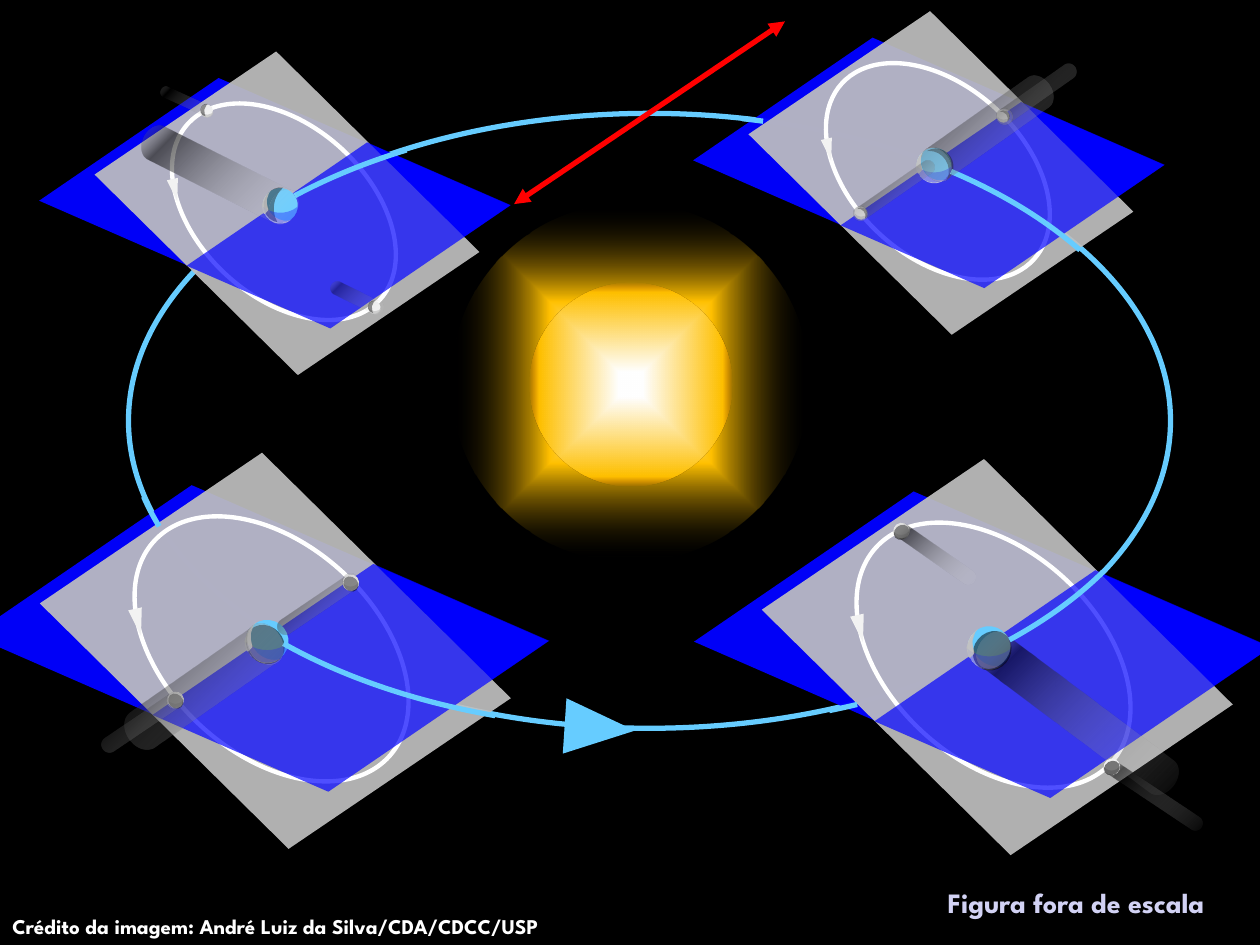
import pptx
import pptx.util
import pptx.dml.color
import pptx.enum.shapes
import pptx.enum.text
import pptx.oxml
import pptx.oxml.ns

KIND = pptx.enum.shapes.MSO_SHAPE
COLORS = {
    "space": "000000", "sky": "66CCFF", "blue": "0000FF", "sheet": "BFBFBF",
    "white": "FFFFFF", "pale": "F2F2F2", "land": "BFBFBF", "rim": "D9D9D9",
    "patch": "C0C0C0", "red": "FF0000", "lilac": "D2D2F4", "gold": "FFC000",
    "amber": "EE8800",
}
FONT = "League Spartan"
COAST = [(2.07, 0.77), (2.05, 0.8), (2.04, 0.83), (2.03, 0.86), (2.03, 0.9),
         (2.04, 0.95), (2.04, 0.97), (2.01, 1), (2, 1), (1.99, 0.97),
         (1.98, 0.92), (2, 0.86), (2.03, 0.81)]


def rgb(name):
    return pptx.dml.color.RGBColor.from_string(COLORS[name])


def add_run(p, text, size=12, color="white", bold=True):
    r = p.add_run()
    r.text = text
    r.font.name = FONT
    r.font.size = pptx.util.Pt(size)
    r.font.bold = bold
    r.font.color.rgb = rgb(color)
    return r


class Scene:
    def __init__(self, prs):
        self.unit = prs.slide_width / 10
        self.slide = prs.slides.add_slide(prs.slide_layouts[6])
        self.slide.background.fill.solid()
        self.slide.background.fill.fore_color.rgb = rgb("space")
        self.ungroup()

    def group(self):
        self.shapes = self.slide.shapes.add_group_shape().shapes

    def ungroup(self):
        self.shapes = self.slide.shapes

    def cells(self, *values):
        return [round(v * self.unit) for v in values]

    def paint(self, s, fill=None, alpha=100, line=None, width=3):
        s.shadow.inherit = False
        if fill:
            s.fill.solid()
            s.fill.fore_color.rgb = rgb(fill)
            if alpha < 100:
                clr = s.fill._xPr.find(".//" + pptx.oxml.ns.qn("a:srgbClr"))
                clr.append(pptx.oxml.parse_xml(
                    f'<a:alpha {pptx.oxml.ns.nsdecls("a")} val="{alpha * 1000}"/>'))
        else:
            s.fill.background()
        if line:
            s.line.color.rgb = rgb(line)
            s.line.width = pptx.util.Pt(width)
        else:
            s.line.fill.background()
        return s

    def shape(self, kind, box, rot=0, adj=(), **look):
        s = self.shapes.add_shape(kind, *self.cells(*box))
        s.rotation = rot
        for i, value in enumerate(adj):
            s.adjustments[i] = value
        return self.paint(s, **look)

    def glow(self, kind, box, stops, route, focus, rot=0, adj=()):
        s = self.shape(kind, box, rot, adj)
        gs = "".join(
            f'<a:gs pos="{pos * 1000}"><a:srgbClr val="{COLORS[c]}">'
            f'<a:alpha val="{alpha * 1000}"/></a:srgbClr></a:gs>'
            for pos, c, alpha in stops)
        l, t, r, b = (v * 1000 for v in focus)
        props = s._element.spPr
        old = props.find(pptx.oxml.ns.qn("a:noFill"))
        props.replace(old, pptx.oxml.parse_xml(
            f'<a:gradFill {pptx.oxml.ns.nsdecls("a")} rotWithShape="1"><a:gsLst>{gs}</a:gsLst>'
            f'<a:path path="{route}"><a:fillToRect l="{l}" t="{t}" r="{r}" b="{b}"/>'
            f'</a:path></a:gradFill>'))

    def shadow(self, box, rot, adj=0.977, dark=56):
        stops = [(0, "white", 0), (81, "space", dark), (100, "sheet", 0)]
        self.glow(KIND.CAN, box, stops, "circle", (100, 100, 0, 0), rot, [adj])

    def arc(self, x, y, start, end):
        self.shape(KIND.ARC, (x, y, 8.3, 4.92), adj=(start, end), line="sky")

    def moon(self, x, y, night, rot):
        d = 0.13 if night == "disc" else 0.1
        half = d / 2
        self.shape(KIND.OVAL, (x, y, d, d), 351.5, fill="pale")
        self.shape(KIND.MOON, (x + 0.03, y + 0.03, half, d), 270, [0.5],
                   fill="patch", alpha=72)
        if night == "disc":
            self.shape(KIND.OVAL, (x + 0.01, y + 0.01, 0.11, d), rot,
                       fill="space", alpha=51)
        else:
            dx, adj = (0.05, 0.46) if night == "right" else (0, 0.63)
            self.shape(KIND.MOON, (x + dx, y - 0.01, half, d), rot, [adj],
                       fill="space", alpha=47)

    def planet(self, x, y, scale, night_kind, night, rot, adj=(), alpha=47):
        self.group()

        def part(kind, box, *args, **look):
            left, top, w, h = (v * scale for v in box)
            self.shape(kind, (x + left, y + top, w, h), *args, **look)

        part(KIND.PARALLELOGRAM, (0, 0, 4.21, 1.79), 23.6, [0.626], fill="blue", alpha=97)
        part(KIND.PARALLELOGRAM, (0.63, -0.05, 3.19, 2.09), 44.6, [0.199],
             fill="sheet", alpha=92)
        part(KIND.OVAL, (0.93, 0.15, 2.53, 1.66), 42.6, line="white", width=2.5)
        part(KIND.PARALLELOGRAM, (1.5, 0.31, 2.65, 1.8), 23.6, [0.626], fill="blue", alpha=69)
        part(KIND.OVAL, (1.99, 0.75, 0.34, 0.34), 351.5, fill="sky")
        part(KIND.MOON, (2.01, 0.81, 0.16, 0.34), 320.6, [0.341], fill="rim", alpha=94)
        part(night_kind, night, rot, adj, fill="space", alpha=alpha)
        part(KIND.MOON, (2.08, 0.84, 0.16, 0.34), 270, [0.629], fill="blue", alpha=36)
        coast = [self.cells(x + px * scale, y + py * scale) for px, py in COAST]
        fb = self.shapes.build_freeform(*coast[0])
        fb.add_line_segments(coast[1:], close=True)
        self.paint(fb.convert_to_shape(), fill="land", alpha=85)
        part(KIND.ISOSCELES_TRIANGLE, (1.08, 0.66, 0.11, 0.22), 167.6, fill="pale")

    def arrow(self, start, end, color):
        s = self.shapes.add_connector(pptx.enum.shapes.MSO_CONNECTOR.STRAIGHT,
                                      *self.cells(*start, *end))
        s.line.color.rgb = rgb(color)
        s.line.width = pptx.util.Pt(3)
        ns = pptx.oxml.ns.nsdecls("a")
        for tip in ("headEnd", "tailEnd"):
            s.line._get_or_add_ln().append(
                pptx.oxml.parse_xml(f'<a:{tip} {ns} type="triangle"/>'))
        s._element.spPr.append(pptx.oxml.parse_xml(f'<a:effectLst {ns}/>'))

    def caption(self, box, text, wrap=True, align="LEFT", **style):
        tf = self.shapes.add_textbox(*self.cells(*box)).text_frame
        tf.word_wrap = wrap
        tf.auto_size = pptx.enum.text.MSO_AUTO_SIZE.SHAPE_TO_FIT_TEXT
        p = tf.paragraphs[0]
        p.alignment = getattr(pptx.enum.text.PP_ALIGN, align)
        add_run(p, text, **style)


def main():
    prs = pptx.Presentation()
    prs.slide_width = pptx.util.Inches(10)
    prs.slide_height = pptx.util.Inches(7.5)
    scene = Scene(prs)
    small = 0.817

    scene.shape(KIND.OVAL, (1.02, 0.9, 8.27, 4.88), line="sky")
    scene.caption((0, 7.2, 5.28, 0.3), "Crédito da imagem: André Luiz da Silva/CDA/CDCC/USP")
    scene.shape(KIND.ISOSCELES_TRIANGLE, (4.54, 5.5, 0.44, 0.56), 93.8, fill="sky")

    scene.planet(-0.04, 4.17, 1, KIND.OVAL, (2, 0.78, 0.29, 0.33), 316.4, alpha=51)
    scene.moon(1.33, 5.49, "disc", 316.4)
    scene.moon(2.72, 4.56, "disc", 316.4)
    scene.arc(0.95, 0.86, 69.82, 88.74)
    scene.shadow((2.46, 4.42, 0.13, 0.75), 56)
    scene.shadow((1.45, 4.73, 0.34, 1.44), 55, 0.771)
    scene.shadow((1.06, 5.36, 0.13, 0.75), 56)

    scene.planet(5.65, 0.56, small, KIND.MOON, (2.17, 0.71, 0.16, 0.34), 146.6, [0.358])
    scene.moon(6.78, 1.64, "right", 142.5)
    scene.moon(7.91, 0.87, "right", 142.5)
    scene.arc(0.98, 0.9, 192.25, 202.94)
    scene.shadow((8.16, 0.37, 0.13, 0.75), 235.1)
    scene.shadow((7.69, 0.42, 0.29, 1.2), 234.8, 0.745)
    scene.shadow((7.04, 1.14, 0.11, 0.75), 235.2)

    scene.planet(0.46, 0.88, small, KIND.MOON, (2, 0.73, 0.16, 0.34), 9.4, [0.629])
    scene.moon(2.92, 2.39, "left", 9.4)
    scene.moon(1.59, 0.83, "left", 9.4)
    scene.arc(0.97, 0.92, 127.98, 137.49)
    scene.shadow((1.6, 0.72, 0.29, 1.34), 116.5, 0.745)
    scene.shadow((2.78, 2.14, 0.11, 0.45), 116.4, dark=35)
    scene.shadow((1.43, 0.59, 0.09, 0.43), 114, 0.866)

    scene.ungroup()
    scene.arc(0.98, 0.9, 172.51, 174.68)
    scene.arc(1.01, 0.87, 100.64, 102.81)

    scene.planet(5.69, 4.22, 1, KIND.OVAL, (2.04, 0.78, 0.29, 0.33), 220, alpha=51)
    scene.moon(7.09, 4.15, "disc", 48.2)
    scene.shadow((8.39, 4.71, 0.32, 1.9), 306.8, 0.745)
    scene.shadow((7.36, 4.02, 0.12, 0.75), 304.8)
    scene.shadow((9.09, 5.85, 0.12, 0.92), 303.7)
    scene.moon(8.76, 6.02, "disc", 240.2)
    scene.arc(1.05, 0.81, 11.81, 19.65)

    scene.ungroup()
    scene.arrow((6.23, 0.17), (4.08, 1.62), "red")
    scene.caption((7.28, 6.98, 2.52, 0.37), "Figura fora de escala", wrap=False,
                  align="CENTER", size=16, color="lilac")
    scene.arc(1.1, 0.85, 33.45, 36.15)

    scene.group()
    centre = (50, 50, 50, 50)
    scene.glow(KIND.OVAL, (3.58, 1.61, 2.84, 2.85),
               [(7, "white", 100), (45, "gold", 100), (100, "space", 0)], "shape", centre)
    scene.glow(KIND.OVAL, (4.2, 2.24, 1.61, 1.62),
               [(12, "white", 100), (90, "gold", 100), (100, "amber", 0)], "shape", centre)
    prs.save("out.pptx")


if __name__ == "__main__":
    main()
